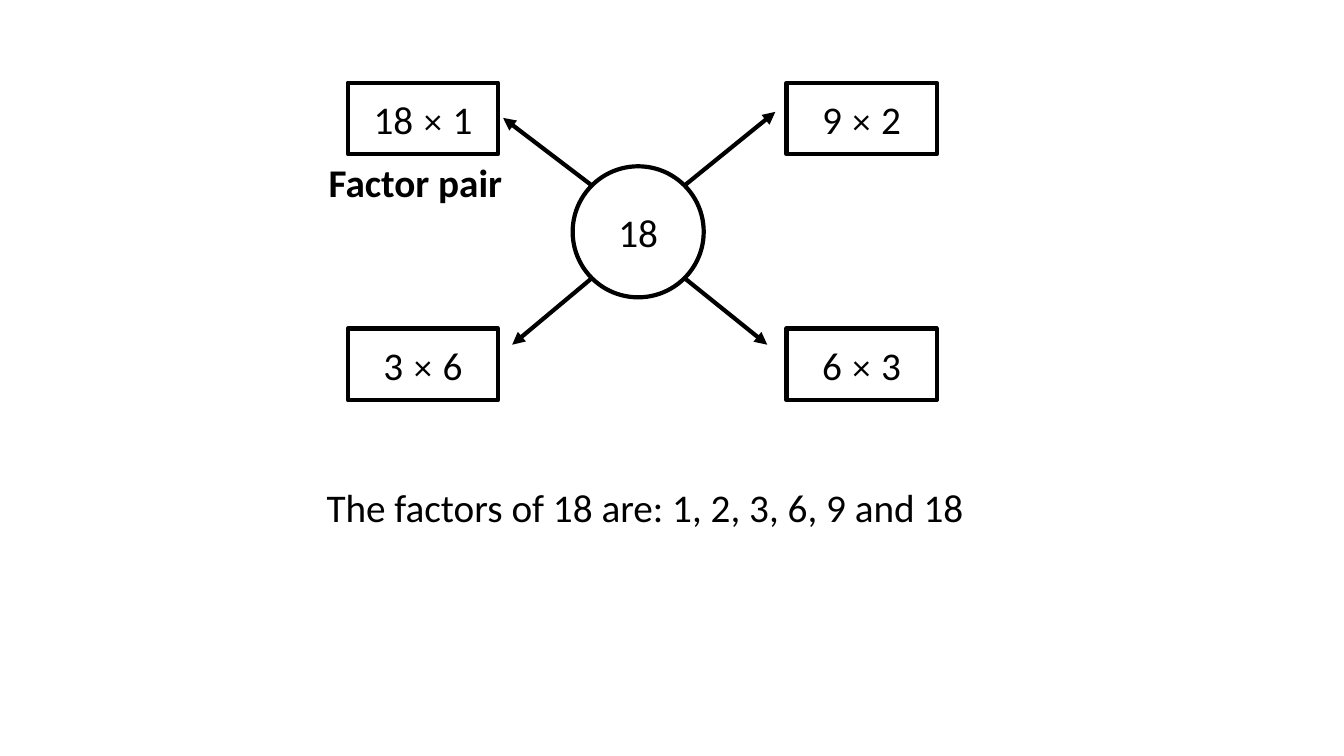
from dataclasses import dataclass

from lxml.etree import SubElement
from pptx import Presentation
from pptx.dml.color import RGBColor
from pptx.enum.shapes import MSO_CONNECTOR, MSO_SHAPE
from pptx.enum.text import MSO_ANCHOR, PP_ALIGN
from pptx.oxml.ns import qn
from pptx.shapes.autoshape import Shape
from pptx.slide import Slide
from pptx.util import Inches, Pt

BLACK = "000000"
TEXT_FONT, TIMES_FONT = "Calibri", "Cambria"
TEXT_SIZE, LINE_WIDTH = 28, 3
TIMES = "×"
NUMBER = 18

BOX_WIDTH, BOX_HEIGHT = 1.49, 0.71
LEFT, RIGHT = 3.45, 7.8
TOP, BOTTOM = 0.82, 3.26
CIRCLE_LEFT, CIRCLE_TOP, CIRCLE_SIZE = 5.68, 1.65, 1.3
RIM_INSET = 0.19  # from the circle's bounding square to its diagonal points


@dataclass(frozen=True)
class FactorPair:
    first: int
    second: int
    left: float
    top: float
    arrow_tip: tuple[float, float]


@dataclass(frozen=True)
class Caption:
    text: str
    left: float
    top: float
    width: float
    align: PP_ALIGN
    bold: bool = False


PAIRS = [
    FactorPair(18, 1, LEFT, TOP, (4.99, 1.17)),
    FactorPair(9, 2, RIGHT, TOP, (7.69, 1.11)),
    FactorPair(6, 3, RIGHT, BOTTOM, (7.61, 3.42)),
    FactorPair(3, 6, LEFT, BOTTOM, (5.08, 3.42)),
]
CAPTIONS = [
    Caption("Factor pair", 2.88, 1.52, 2.48, PP_ALIGN.CENTER, bold=True),
    Caption("The factors of 18 are: 1, 2, 3, 6, 9 and 18",
            3.14, 4.75, 7.48, PP_ALIGN.LEFT),
]


def rgb(color: str) -> RGBColor:
    return RGBColor.from_string(color)


def write(sp: Shape, pieces: list[str], align: PP_ALIGN, bold: bool = False) -> None:
    """Fill a shape with one paragraph, setting the times sign in its own font."""
    tf = sp.text_frame
    tf.word_wrap = True
    p = tf.paragraphs[0]
    p.alignment = align
    for piece in pieces:
        r = p.add_run()
        r.text = piece
        r.font.name = TIMES_FONT if piece == TIMES else TEXT_FONT
        r.font.size = Pt(TEXT_SIZE)
        r.font.bold = bold
        r.font.color.rgb = rgb(BLACK)


def add_outline(s: Slide, preset: MSO_SHAPE, left: float, top: float,
                width: float, height: float, pieces: list[str]) -> None:
    sp = s.shapes.add_shape(preset, Inches(left), Inches(top),
                            Inches(width), Inches(height))
    sp.shadow.inherit = False
    sp.fill.background()
    sp.line.color.rgb = rgb(BLACK)
    sp.line.width = Pt(LINE_WIDTH)
    sp.text_frame.vertical_anchor = MSO_ANCHOR.MIDDLE
    write(sp, pieces, PP_ALIGN.CENTER)


def add_arrow(s: Slide, pair: FactorPair) -> None:
    """Point from the circle's rim towards the box of a factor pair."""
    near, far = RIM_INSET, CIRCLE_SIZE - RIM_INSET
    x = CIRCLE_LEFT + (near if pair.left == LEFT else far)
    y = CIRCLE_TOP + (near if pair.top == TOP else far)
    tip_x, tip_y = pair.arrow_tip
    arrow = s.shapes.add_connector(MSO_CONNECTOR.STRAIGHT, Inches(x), Inches(y),
                                   Inches(tip_x), Inches(tip_y))
    arrow.line.color.rgb = rgb(BLACK)
    arrow.line.width = Pt(LINE_WIDTH)
    SubElement(arrow.line._get_or_add_ln(), qn("a:tailEnd"), type="triangle")
    SubElement(arrow._element.spPr, qn("a:effectLst"))


def add_caption(s: Slide, caption: Caption) -> None:
    sp = s.shapes.add_textbox(Inches(caption.left), Inches(caption.top),
                              Inches(caption.width), Inches(0.57))
    write(sp, [caption.text], caption.align, caption.bold)


def main() -> None:
    prs = Presentation()
    prs.slide_width, prs.slide_height = Inches(13.33), Inches(7.5)
    s = prs.slides.add_slide(prs.slide_layouts[6])
    add_outline(s, MSO_SHAPE.OVAL, CIRCLE_LEFT, CIRCLE_TOP,
                CIRCLE_SIZE, CIRCLE_SIZE, [str(NUMBER)])
    for pair in PAIRS:
        add_arrow(s, pair)
        add_outline(s, MSO_SHAPE.RECTANGLE, pair.left, pair.top, BOX_WIDTH, BOX_HEIGHT,
                    [f"{pair.first} ", TIMES, f" {pair.second}"])
    for caption in CAPTIONS:
        add_caption(s, caption)
    prs.save("out.pptx")


if __name__ == "__main__":
    main()
